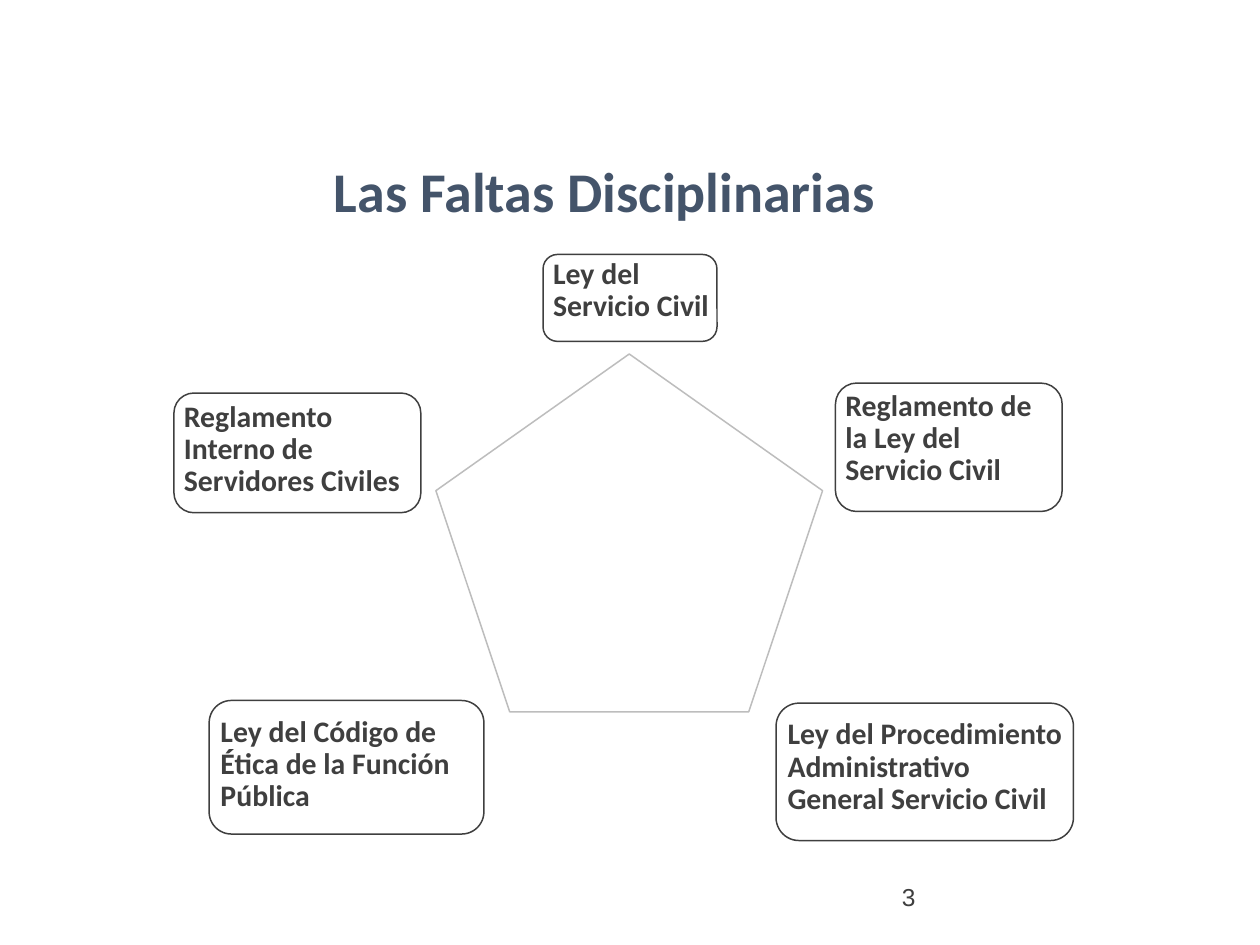
from pptx import Presentation
from pptx import util as u
from pptx.dml.color import RGBColor
from pptx.enum import shapes, text

WHITE = RGBColor(0xFF, 0xFF, 0xFF)
DARK = RGBColor(0x3F, 0x3F, 0x3F)
GREY = RGBColor(0xBD, 0xBD, 0xBD)
NAVY = RGBColor(0x44, 0x54, 0x6A)

LABEL_INSET = 3.6

# Label, box (left, top, width, height), text area (left, top, width, height)
LAWS = [
    ("Ley del Servicio Civil",
     (310.3, 145.4, 99.4, 49.7), (312.5, 147.6, 97.2, 37.4)),
    ("Reglamento de la Ley del Servicio Civil",
     (477.4, 218.9, 129.6, 73.4), (479.5, 219.6, 127.4, 62.6)),
    ("Ley del Procedimiento Administrativo General Servicio Civil",
     (443.5, 401.8, 169.9, 78.5), (446.4, 405.4, 167, 66.2)),
    ("Ley del Código de Ética de la Función Pública",
     (119.5, 400.3, 157, 76.3), (122.4, 404.6, 154.1, 64.8)),
    ("Reglamento Interno de Servidores Civiles",
     (99.4, 224.6, 141.1, 68.4), (101.5, 228.2, 139, 57.6)),
]


def pts(box):
    return [u.Pt(v) for v in box]


def add_run(p, words, font, size, color, bold=False):
    r = p.add_run()
    r.text = words
    r.font.name = font
    r.font.size = u.Pt(size)
    r.font.bold = bold
    r.font.color.rgb = color


def add_outline(parent, kind, box, color):
    sp = parent.add_shape(kind, *pts(box))
    sp.shadow.inherit = False
    sp.fill.solid()
    sp.fill.fore_color.rgb = WHITE
    sp.line.color.rgb = color
    sp.line.width = u.Pt(0.85)


def add_text(parent, box):
    tf = parent.add_textbox(*pts(box)).text_frame
    tf.word_wrap = True
    return tf


def add_law(s, words, box, text_box):
    group = s.shapes.add_group_shape().shapes
    add_outline(group, shapes.MSO_SHAPE.ROUNDED_RECTANGLE, box, DARK)
    tf = add_text(group, text_box)
    tf.vertical_anchor = text.MSO_ANCHOR.MIDDLE
    tf.margin_left = tf.margin_right = u.Pt(LABEL_INSET)
    tf.margin_top = tf.margin_bottom = u.Pt(LABEL_INSET)
    p = tf.paragraphs[0]
    p.line_spacing = 0.9
    add_run(p, words, "Calibri", 17, DARK, bold=True)


def set_title(s, words):
    sp = s.shapes.title
    sp.left, sp.top, sp.width, sp.height = pts((42.5, 88.6, 606.2, 39.6))
    tf = sp.text_frame
    tf.auto_size = text.MSO_AUTO_SIZE.NONE
    tf.vertical_anchor = text.MSO_ANCHOR.MIDDLE
    p = tf.paragraphs[0]
    p.alignment = text.PP_ALIGN.CENTER
    add_run(p, words, "Calibri", 32, NAVY, bold=True)


def main():
    prs = Presentation()
    prs.slide_width, prs.slide_height = u.Pt(720), u.Pt(540)
    s = prs.slides.add_slide(prs.slide_layouts[5])

    # Title and page number
    set_title(s, "Las Faltas Disciplinarias")
    tf = add_text(s.shapes, (508.3, 500.4, 162, 28.8))
    add_run(tf.paragraphs[0], "3", "Arial", 14, DARK)

    # Pentagon with one law at each corner
    add_outline(s.shapes, shapes.MSO_SHAPE.REGULAR_PENTAGON,
                (249.1, 202.3, 221, 204.5), GREY)
    for law in LAWS:
        add_law(s, *law)

    prs.save("out.pptx")


if __name__ == "__main__":
    main()
